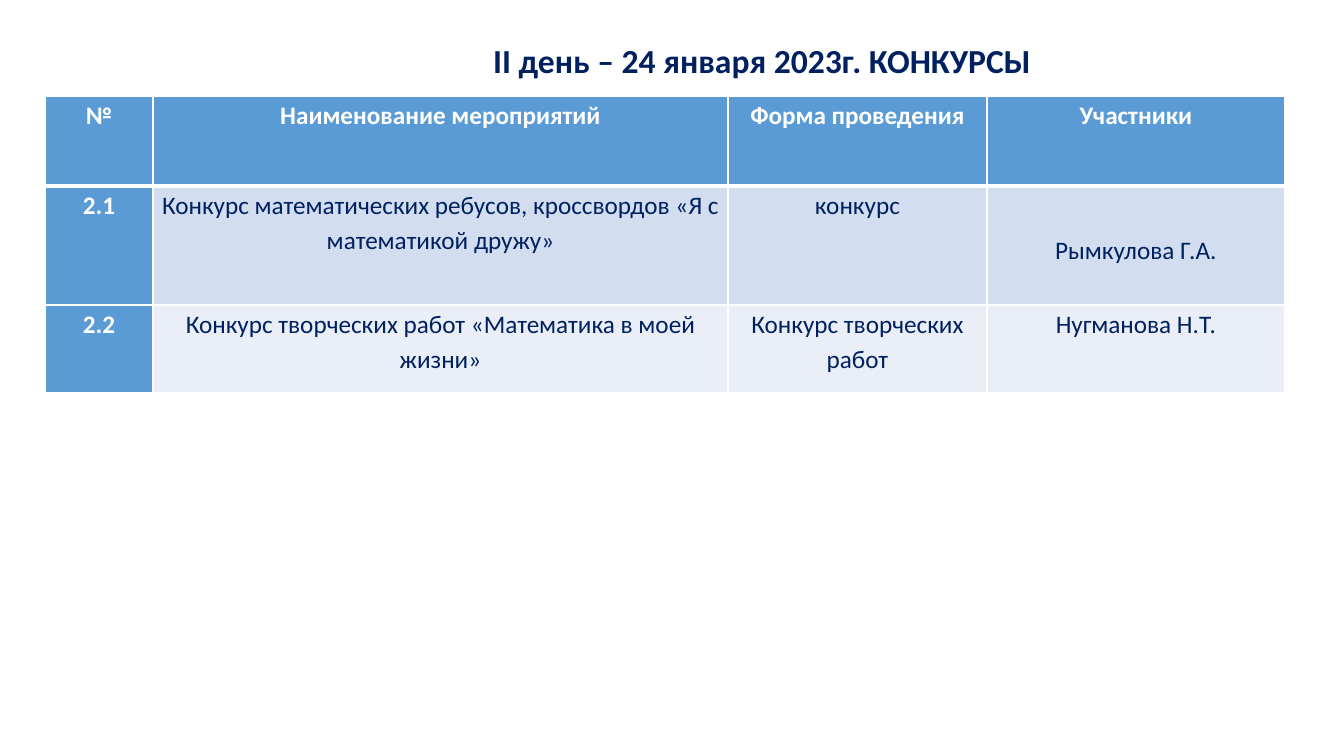
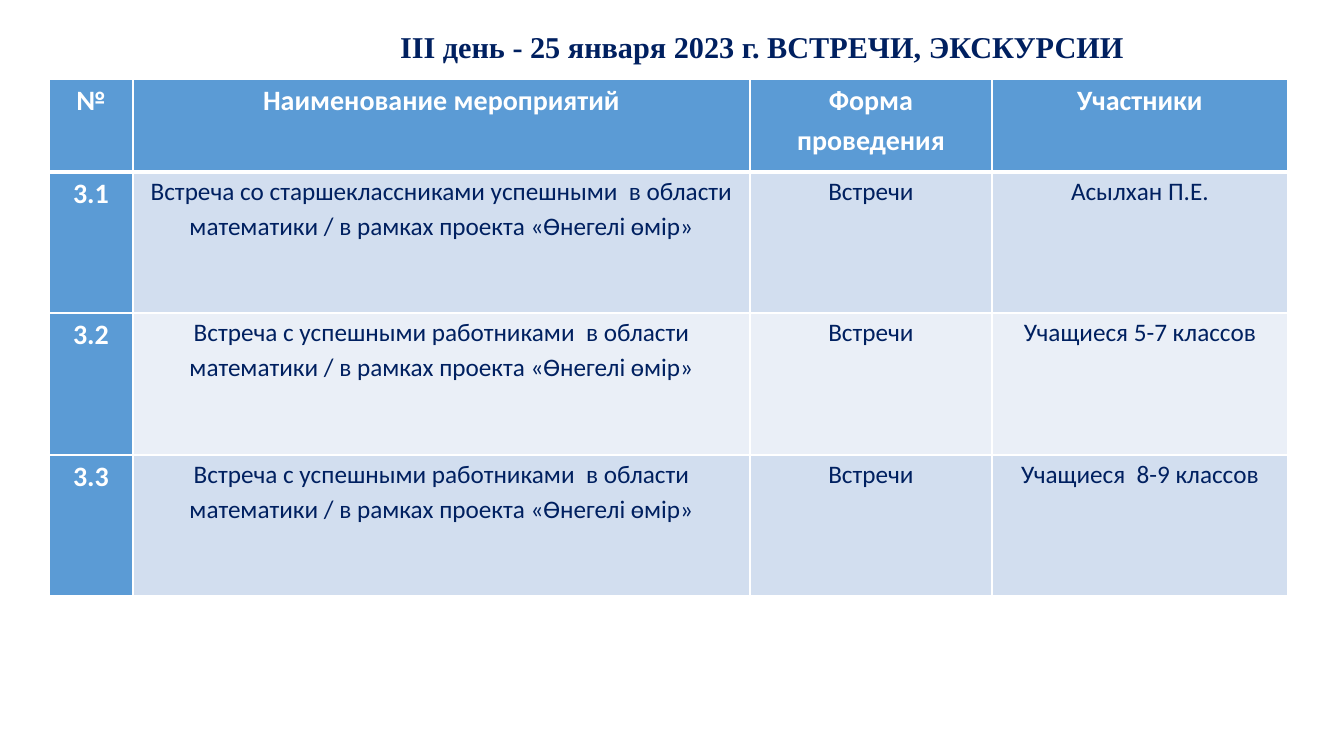
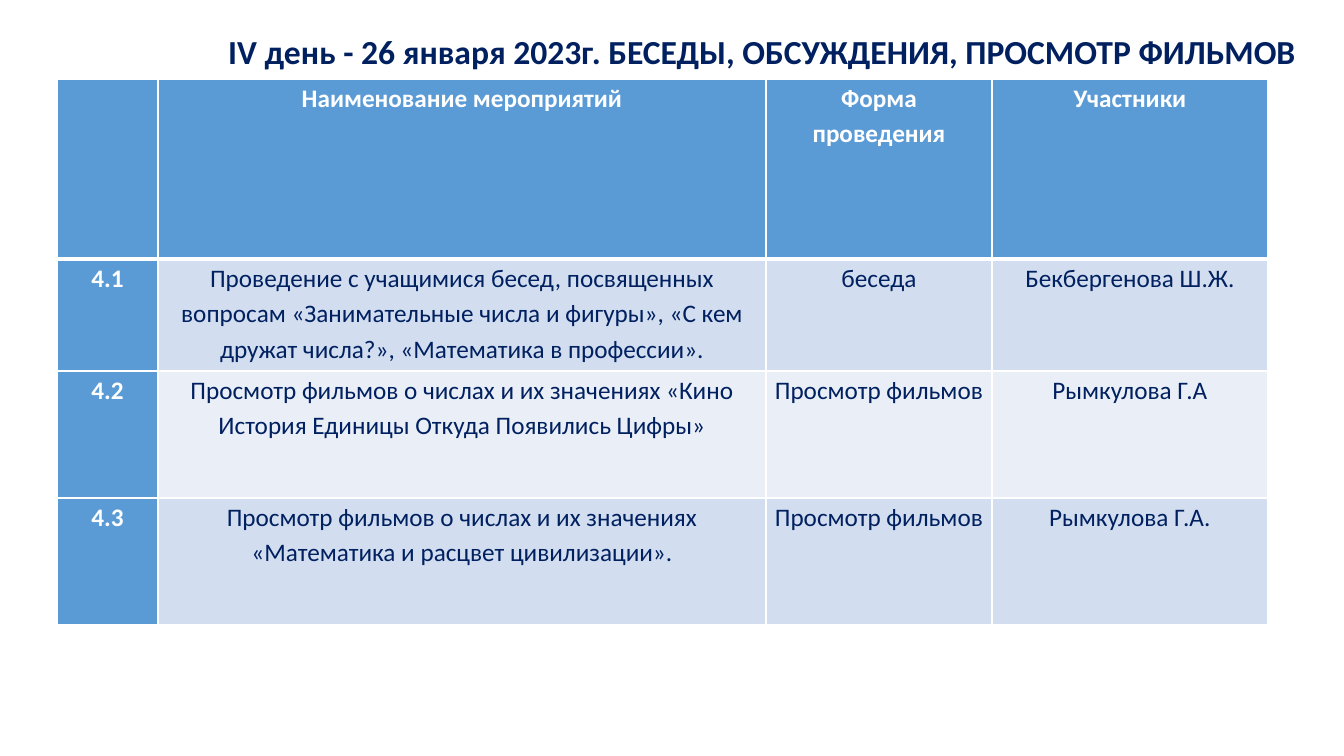
"""Build the schedule slides of a school mathematics week."""
from dataclasses import dataclass

from lxml.etree import SubElement
from pptx import Presentation
from pptx.dml.color import RGBColor
from pptx.enum.text import MSO_ANCHOR as Anchor, PP_ALIGN as Align
from pptx.oxml.ns import qn
from pptx.util import Emu, Pt

PX_PER_INCH = 100.8
NAVY, BLUE, WHITE = "002060", "5B9BD5", "FFFFFF"
BANDS = ("D2DEEF", "EAEFF7")
HEADINGS = ("Наименование мероприятий", "Форма проведения", "Участники")
TITLE_LEFT, TITLE_WIDTH = 211, 1102
CELL_INSET = 7
THIN, THICK = 1, 3
MEETING = "в области математики / в рамках проекта «Өнегелі өмір»"


@dataclass(frozen=True)
class Event:
    number: str
    name: str
    form: str
    people: str
    people_drop: int = 0


@dataclass(frozen=True)
class Day:
    title: str
    title_top: int
    title_height: int
    left: int
    top: int
    cols: tuple[int, ...]
    rows: tuple[int, ...]
    events: tuple[Event, ...]
    corner: str = "№"
    title_font: str = "Calibri"
    title_size: float = 24
    label_size: int = 18


DAYS = (
    Day("ІІ день – 24 января 2023г. КОНКУРСЫ", 30, 66, 45, 96,
        (108, 575, 259, 298), (90, 119, 88), (
            Event("2.1", "Конкурс математических ребусов, кроссвордов «Я с математикой дружу»",
                  "конкурс", "Рымкулова Г.А.", people_drop=45),
            Event("2.2", "Конкурс творческих работ «Математика в моей жизни»",
                  "Конкурс творческих работ", "Нугманова Н.Т."),
        )),
    Day("ІІІ день - 25 января 2023 г. ВСТРЕЧИ, ЭКСКУРСИИ", 30, 37, 49, 79,
        (84, 617, 242, 296), (93, 141, 142, 141), (
            Event("3.1", f"Встреча со старшеклассниками успешными  {MEETING}",
                  "Встречи", "Асылхан П.Е."),
            Event("3.2", f"Встреча с успешными работниками  {MEETING}",
                  "Встречи", "Учащиеся 5-7 классов"),
            Event("3.3", f"Встреча с успешными работниками  {MEETING}",
                  "Встречи", "Учащиеся  8-9 классов"),
        ), title_font="Times New Roman", title_size=21.6, label_size=20),
    Day("IV день - 26 января 2023г. БЕСЕДЫ, ОБСУЖДЕНИЯ, ПРОСМОТР ФИЛЬМОВ", 10, 87, 57, 79,
        (101, 608, 226, 276), (180, 112, 127, 127), (
            Event("4.1", "Проведение с учащимися бесед, посвященных вопросам «Занимательные числа "
                  "и фигуры», «С кем дружат числа?», «Математика в профессии».",
                  "беседа", "Бекбергенова Ш.Ж."),
            Event("4.2", "Просмотр фильмов о числах и их значениях «Кино История Единицы "
                  "Откуда Появились Цифры»", "Просмотр фильмов", "Рымкулова Г.А"),
            Event("4.3", "Просмотр фильмов о числах и их значениях «Математика и расцвет "
                  "цивилизации».", "Просмотр фильмов", "Рымкулова Г.А."),
        ), corner=""),
)


def px(n: int) -> Emu:
    return Emu(round(n * 914400 / PX_PER_INCH))


def rgb(color: str) -> RGBColor:
    return RGBColor.from_string(color)


def write(tf, text: str, font: str, size: float, color: str, bold: bool, spacing: float):
    p = tf.paragraphs[0]
    p.text = text
    p.alignment = Align.CENTER
    p.line_spacing = spacing
    p.font.name = font
    p.font.size = Pt(size)
    p.font.bold = bold
    p.font.color.rgb = rgb(color)
    return p


def add_borders(cell, top: int, bottom: int) -> None:
    tc_pr = cell._tc.get_or_add_tcPr()
    sides = (("lnL", THIN), ("lnR", THIN), ("lnT", top), ("lnB", bottom))
    for i, (side, width) in enumerate(sides):
        ln = SubElement(tc_pr, qn(f"a:{side}"), w=str(Pt(width)))
        SubElement(SubElement(ln, qn("a:solidFill")), qn("a:srgbClr"), val=WHITE)
        tc_pr.insert(i, ln)


def fill_cell(cell, text: str, row: int, col: int, label_size: int, drop: int) -> None:
    is_label = row == 0 or col == 0
    cell.margin_left = cell.margin_right = px(CELL_INSET)
    cell.margin_top, cell.margin_bottom = px(drop), 0
    cell.fill.solid()
    cell.fill.fore_color.rgb = rgb(BLUE if is_label else BANDS[(row - 1) % 2])
    add_borders(cell, THICK if row == 1 else THIN, THICK if row == 0 else THIN)
    if text:
        p = write(cell.text_frame, text, "Calibri", label_size if is_label else 18,
                  WHITE if is_label else NAVY, is_label, 1.15)
        p.space_after = Pt(10)


def add_title(s, day: Day) -> None:
    sp = s.shapes.add_textbox(px(TITLE_LEFT), px(day.title_top), px(TITLE_WIDTH),
                              px(day.title_height))
    tf = sp.text_frame
    tf.word_wrap = True
    tf.vertical_anchor = Anchor.MIDDLE
    write(tf, day.title, day.title_font, day.title_size, NAVY, True, 0.9)


def add_schedule(s, day: Day) -> None:
    table = s.shapes.add_table(len(day.rows), len(day.cols), px(day.left), px(day.top),
                               px(sum(day.cols)), px(sum(day.rows))).table
    table.first_row = table.horz_banding = False
    for column, width in zip(table.columns, day.cols):
        column.width = px(width)
    for row, height in zip(table.rows, day.rows):
        row.height = px(height)
    for c, text in enumerate((day.corner, *HEADINGS)):
        fill_cell(table.cell(0, c), text, 0, c, day.label_size, 0)
    for r, event in enumerate(day.events, 1):
        texts = (event.number, event.name, event.form, event.people)
        drops = (0, 0, 0, event.people_drop)
        for c, (text, drop) in enumerate(zip(texts, drops)):
            fill_cell(table.cell(r, c), text, r, c, day.label_size, drop)


def main() -> None:
    prs = Presentation()
    prs.slide_width, prs.slide_height = px(1344), px(756)
    for day in DAYS:
        s = prs.slides.add_slide(prs.slide_layouts[6])
        add_title(s, day)
        add_schedule(s, day)
    prs.save("out.pptx")


if __name__ == "__main__":
    main()
